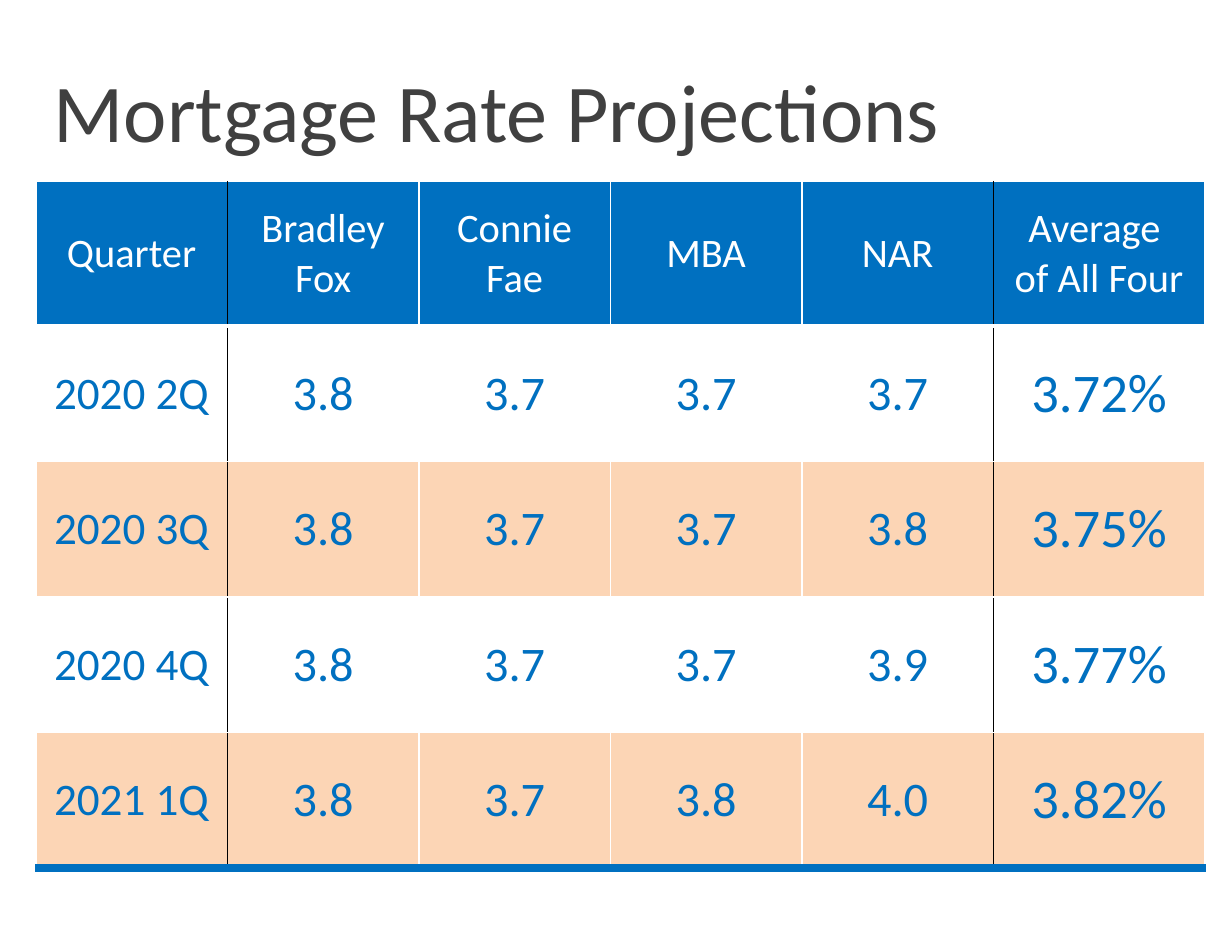
import pptx
import pptx.util
import pptx.dml.color
import pptx.enum.text
import pptx.oxml
import pptx.oxml.ns
import lxml.etree

Inches, Pt = pptx.util.Inches, pptx.util.Pt
RGB = pptx.dml.color.RGBColor.from_string
ALIGN = pptx.enum.text.PP_ALIGN
MIDDLE = pptx.enum.text.MSO_ANCHOR.MIDDLE
qn = pptx.oxml.ns.qn

TITLE = "Mortgage Rate Projections"
ROWS = [
    ("Quarter", "Bradley Fox", "Connie Fae", "MBA", "NAR", "Average \nof All Four"),
    ("2020 2Q", "3.8", "3.7", "3.7", "3.7", "3.72%"),
    ("2020 3Q", "3.8", "3.7", "3.7", "3.8", "3.75%"),
    ("2020 4Q", "3.8", "3.7", "3.7", "3.9", "3.77%"),
    ("2021 1Q", "3.8", "3.7", "3.8", "4.0", "3.82%"),
]
THEME = {
    "font": "Calibri", "title": "404040", "blue": "0070C0", "white": "FFFFFF",
    "band": "FCD5B5", "black": "000000",
    "title_size": 52.8, "head_size": 26, "quarter_size": 29,
    "rate_size": 31, "average_size": 35,
}
COLS = [1.71] * 5 + [1.89]
HEIGHTS = [1.29] + [1.21] * 4
LAST_ROW, LAST_COL = len(ROWS) - 1, len(COLS) - 1
RULED = {1, LAST_COL}


def apply(obj, values):
    for name, value in values.items():
        setattr(obj, name, value)


def style_text(tf, size, color, align):
    for p in tf.paragraphs:
        p.alignment = align
        for r in p.runs:
            apply(r.font, {"name": THEME["font"], "size": Pt(size), "bold": False})
            r.font.color.rgb = RGB(THEME[color])


def set_borders(cell, borders):
    tc_pr = cell._tc.get_or_add_tcPr()
    for i, (side, (color, width)) in enumerate(borders.items()):
        ln = pptx.oxml.parse_xml(
            f'<a:{side} xmlns:a="http://schemas.openxmlformats.org/drawingml/2006/main" '
            f'w="{Pt(width)}"><a:solidFill><a:srgbClr val="{THEME[color]}"/>'
            f'</a:solidFill></a:{side}>')
        tc_pr.insert(i, ln)


def cell_borders(row, col):
    return {
        "lnL": ("black" if col in RULED else "white", 1),
        "lnR": ("black" if col + 1 in RULED else "white", 1),
        "lnT": ("white", 3 if row == 1 else 1),
        "lnB": ("blue", 6) if row == LAST_ROW else ("white", 3 if row == 0 else 1),
    }


def cell_size(row, col):
    if row == 0:
        return THEME["head_size"]
    special = {0: "quarter_size", LAST_COL: "average_size"}
    return THEME[special.get(col, "rate_size")]


def cell_fill(row):
    if row == 0:
        return THEME["blue"]
    return THEME["white" if row % 2 else "band"]


def add_title(s):
    sp = s.shapes.title
    apply(sp, {"left": Inches(0.38), "top": Inches(0.48),
               "width": Inches(9.53), "height": Inches(0.99)})
    tf = sp.text_frame
    tf.text = TITLE
    apply(tf, {"word_wrap": True, "vertical_anchor": MIDDLE,
               "auto_size": pptx.enum.text.MSO_AUTO_SIZE.NONE})
    style_text(tf, THEME["title_size"], "title", ALIGN.LEFT)


def add_rates(s):
    tbl = s.shapes.add_table(
        len(ROWS), len(COLS), Inches(0.32), Inches(1.62),
        Inches(sum(COLS)), Inches(sum(HEIGHTS))).table
    for column, width in zip(tbl.columns, COLS):
        column.width = Inches(width)
    for i, (row, height) in enumerate(zip(ROWS, HEIGHTS)):
        tbl.rows[i].height = Inches(height)
        for j, text in enumerate(row):
            cell = tbl.cell(i, j)
            cell.text = text
            apply(cell, {"vertical_anchor": MIDDLE,
                         "margin_left": Inches(0.11), "margin_right": Inches(0.11),
                         "margin_top": Inches(0.07), "margin_bottom": Inches(0.07)})
            cell.fill.solid()
            cell.fill.fore_color.rgb = RGB(cell_fill(i))
            style_text(cell.text_frame, cell_size(i, j),
                       "blue" if i else "white", ALIGN.CENTER)
            set_borders(cell, cell_borders(i, j))


def main():
    prs = pptx.Presentation()
    apply(prs, {"slide_width": Inches(11), "slide_height": Inches(8.5)})
    s = prs.slides.add_slide(prs.slide_layouts[5])
    add_title(s)
    add_rates(s)
    prs.save("out.pptx")


if __name__ == "__main__":
    main()
